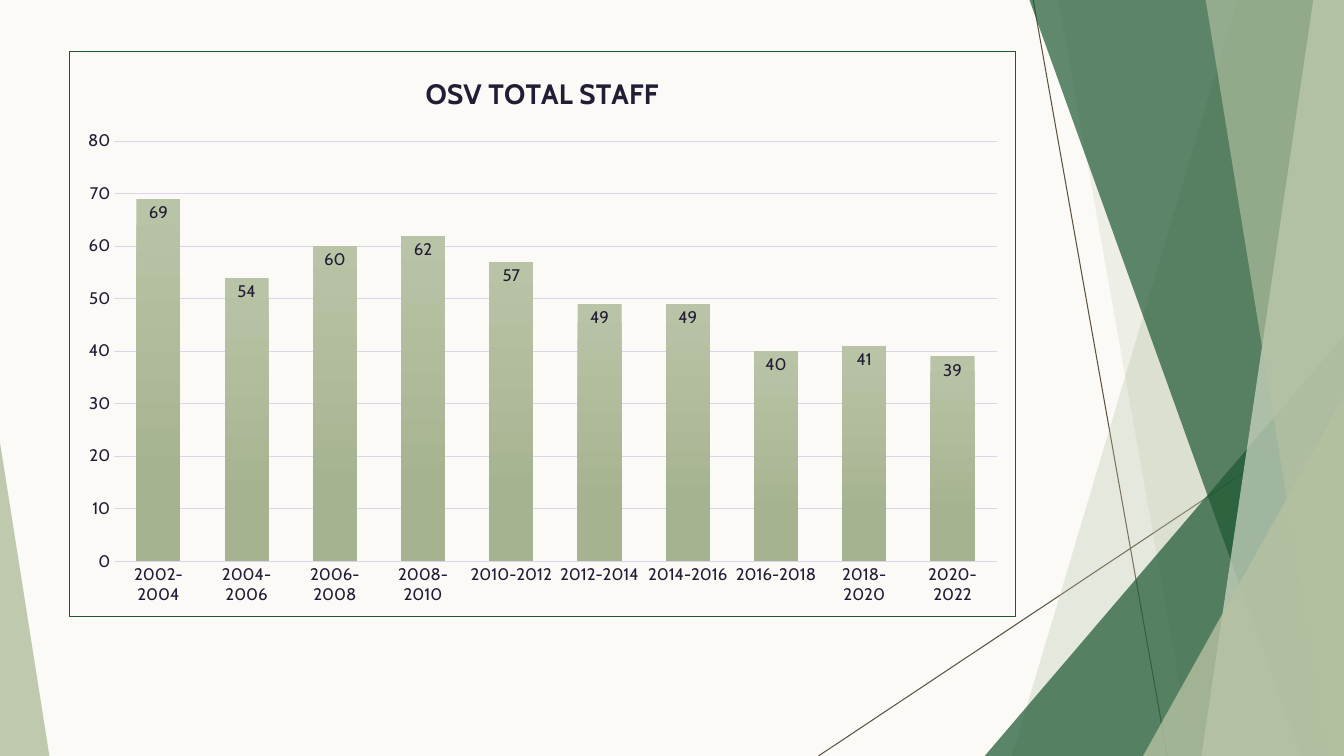
from lxml import etree
from pptx import Presentation
from pptx.chart.data import CategoryChartData
from pptx.dml.color import RGBColor
from pptx.enum.chart import XL_CHART_TYPE, XL_LABEL_POSITION, XL_TICK_MARK
from pptx.enum.shapes import MSO_CONNECTOR, MSO_SHAPE
from pptx.oxml import parse_xml
from pptx.oxml.ns import nsdecls, qn
from pptx.util import Pt

CREAM = RGBColor(0xFB, 0xFA, 0xF6)
BROWN = RGBColor(0x5D, 0x51, 0x3E)
SAGE = RGBColor(0xB5, 0xC1, 0xA1)
PALE = RGBColor(0xD3, 0xDA, 0xC7)
GREEN = RGBColor(0x1E, 0x58, 0x33)
INK = RGBColor(0x22, 0x1C, 0x35)
LILAC = RGBColor(0xDA, 0xD5, 0xE9)
BAR_TOP = RGBColor(0xB9, 0xC4, 0xA6)
BAR_END = RGBColor(0xA6, 0xB3, 0x90)

FONT = "Cabin"
WIDE, HIGH = 960, 540
TOP = -0.7
STAFF = [69, 54, 60, 62, 57, 49, 49, 40, 41, 39]
YEARS = [f"{year}-{year + 2}" for year in range(2002, 2022, 2)]


def apply(item, values):
    """Set each named value on an item."""
    for name, value in values.items():
        setattr(item, name, value)


def style(font, size, color, bold=False):
    """Format a font."""
    apply(font, {"name": FONT, "size": Pt(size), "bold": bold})
    font.color.rgb = color


def stroke(line, color):
    """Give a line its colour and width."""
    line.color.rgb = color
    line.width = Pt(0.75)


def tint(shape, color, alpha):
    """Fill a shape with a see-through colour and no outline."""
    shape.shadow.inherit = False
    shape.fill.solid()
    shape.fill.fore_color.rgb = color
    shape.line.fill.background()
    tone = shape.element.spPr.find(".//" + qn("a:srgbClr"))
    etree.SubElement(tone, qn("a:alpha")).set("val", str(alpha * 1000))


def add_line(slide, *ends):
    """Draw a thin brown line."""
    line = slide.shapes.add_connector(MSO_CONNECTOR.STRAIGHT, *map(Pt, ends))
    stroke(line.line, BROWN)
    etree.SubElement(line.element.spPr, qn("a:effectLst"))


def add_band(slide, head, foot, color, alpha):
    """Draw a band from a slanted left edge to the right slide edge."""
    form = slide.shapes.build_freeform(Pt(head), Pt(TOP))
    rest = [(WIDE, TOP), (WIDE, HIGH), (foot, HIGH)]
    form.add_line_segments([(Pt(x), Pt(y)) for x, y in rest], close=True)
    tint(form.convert_to_shape(), color, alpha)


def add_wedge(slide, left, top, width, peak, color, alpha):
    """Draw a triangle that stands on the bottom slide edge."""
    box = map(Pt, (left, top, width, HIGH - top))
    wedge = slide.shapes.add_shape(MSO_SHAPE.ISOSCELES_TRIANGLE, *box)
    wedge.adjustments[0] = peak
    tint(wedge, color, alpha)


def add_decor(slide):
    """Draw the facets from back to front."""
    add_line(slide, 738, 0, 833.8, HIGH)
    add_line(slide, WIDE, 290.2, 584.6, HIGH)
    add_band(slide, 884.2, 722.9, SAGE, 30)
    add_band(slide, 756, 851.8, SAGE, 20)
    add_wedge(slide, 703.4, 239.8, 256.6, 1, GREEN, 72)
    add_band(slide, 735.1, 929.5, GREEN, 70)
    add_band(slide, 938.2, 858.2, PALE, 70)
    add_band(slide, 861.1, 949, SAGE, 65)
    add_wedge(slide, 816.5, 283, 143.5, 1, SAGE, 80)
    add_wedge(slide, 0, 316.1, 35.3, 0, SAGE, 85)


def add_frame(chart):
    """Put a border round the chart."""
    frame = parse_xml(
        f'<c:spPr {nsdecls("c", "a")}><a:noFill/><a:ln w="{Pt(0.75)}">'
        f'<a:solidFill><a:srgbClr val="{GREEN}"/></a:solidFill></a:ln></c:spPr>'
    )
    chart.element.find(qn("c:chart")).addnext(frame)


def set_axes(chart):
    """Format both axes and the grid."""
    for axis in (chart.category_axis, chart.value_axis):
        style(axis.tick_labels.font, 12, INK)
        apply(axis, {"major_tick_mark": XL_TICK_MARK.NONE,
                     "minor_tick_mark": XL_TICK_MARK.NONE})
    stroke(chart.category_axis.format.line, LILAC)
    scale = chart.value_axis
    apply(scale, {"minimum_scale": 0, "maximum_scale": 80, "major_unit": 10,
                  "has_major_gridlines": True})
    scale.format.line.fill.background()
    stroke(scale.major_gridlines.format.line, LILAC)


def set_bars(plot):
    """Format the bars and their labels."""
    apply(plot, {"gap_width": 100, "overlap": -24,
                 "vary_by_categories": False, "has_data_labels": True})
    labels = plot.data_labels
    apply(labels, {"show_value": True, "position": XL_LABEL_POSITION.INSIDE_END})
    style(labels.font, 12, INK)
    fill = plot.series[0].format.fill
    fill.gradient()
    fill.gradient_angle = 270
    shades = [(0, BAR_TOP), (0.78, BAR_END)]
    for stop, (place, color) in zip(fill.gradient_stops, shades):
        stop.position = place
        stop.color.rgb = color


def add_staff(slide):
    """Add the staff column chart."""
    data = CategoryChartData()
    data.categories = YEARS
    data.add_series("Series 1", STAFF)
    box = map(Pt, (49, 36.7, 676.8, 403.9))
    chart = slide.shapes.add_chart(XL_CHART_TYPE.COLUMN_CLUSTERED, *box, data).chart
    apply(chart, {"has_legend": False, "has_title": True})
    style(chart.font, 10, GREEN)
    title = chart.chart_title.text_frame
    title.text = "OSV TOTAL STAFF"
    style(title.paragraphs[0].runs[0].font, 20, INK, True)
    set_axes(chart)
    set_bars(chart.plots[0])
    add_frame(chart)


def main():
    """Build and save the slide."""
    deck = Presentation()
    apply(deck, {"slide_width": Pt(WIDE), "slide_height": Pt(HIGH)})
    slide = deck.slides.add_slide(deck.slide_layouts[6])
    back = slide.background.fill
    back.solid()
    back.fore_color.rgb = CREAM
    add_decor(slide)
    add_staff(slide)
    deck.save("out.pptx")


if __name__ == "__main__":
    main()
